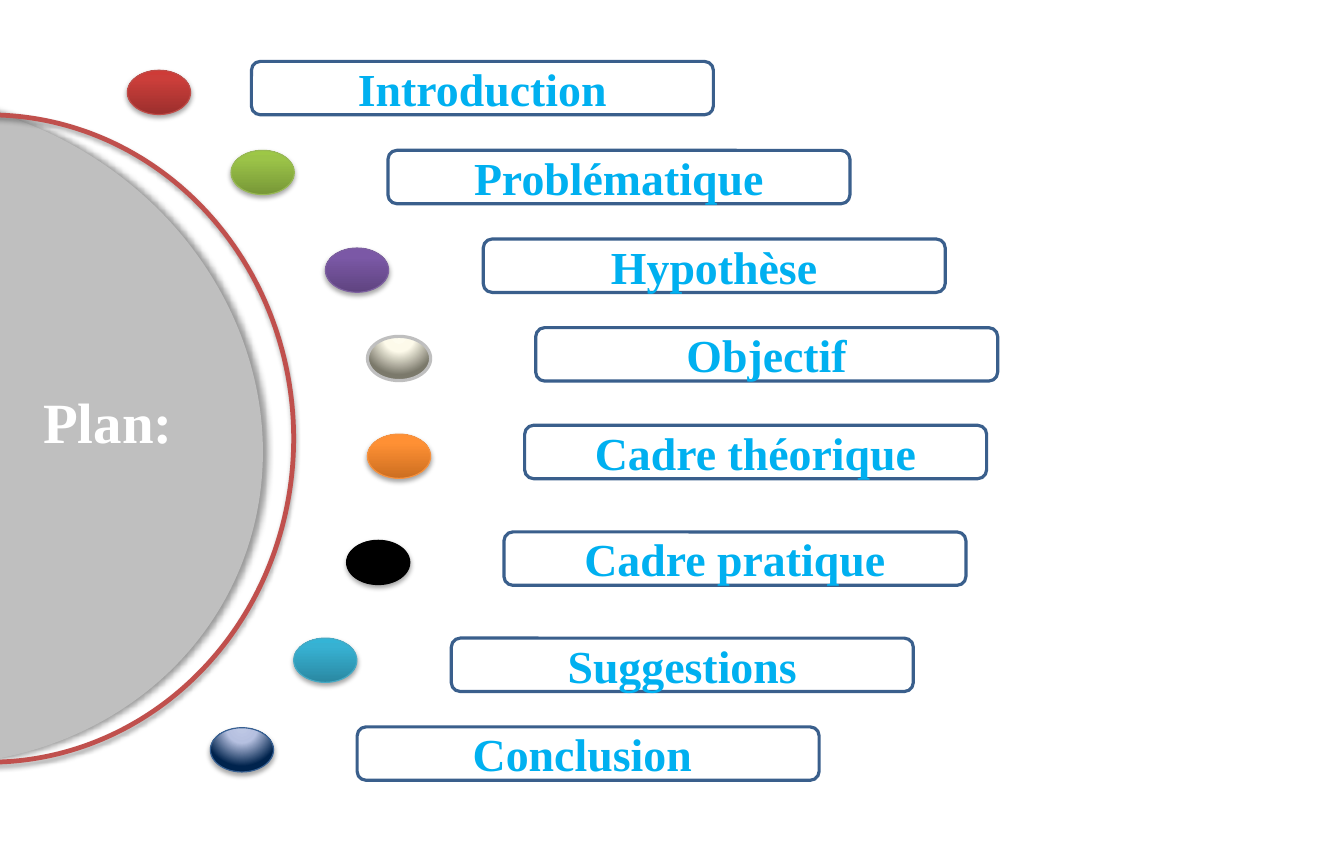
from dataclasses import dataclass
from typing import NamedTuple, Optional

from lxml.etree import SubElement
from pptx import Presentation
from pptx.dml.color import RGBColor
from pptx.enum.shapes import MSO_SHAPE as Preset
from pptx.enum.text import MSO_ANCHOR as Anchor, PP_ALIGN as Align
from pptx.oxml.ns import qn
from pptx.shapes.autoshape import Shape
from pptx.slide import Slide
from pptx.text.text import TextFrame
from pptx.util import Pt


@dataclass(frozen=True)
class Theme:
    font: str = "Times New Roman"
    title_size: float = 36
    label_size: float = 29
    title: str = "FFFFFF"
    label: str = "00B0F0"
    label_line: str = "3A5F8C"
    disc: str = "BFBFBF"
    ring: str = "C0504D"
    shadow: str = "000000"


class Box(NamedTuple):
    left: float
    top: float
    width: float
    height: float


class Shadow(NamedTuple):
    alpha: int
    blur: float
    distance: float
    angle: int


class Gradient(NamedTuple):
    stops: tuple[tuple[int, str], ...]
    spotlight: bool = False


def glossy(dark: str, middle: str, light: str) -> Gradient:
    """Linear shading, dark at the bottom and light at the top."""
    return Gradient(((0, dark), (80, middle), (100, light)))


def spotlit(light: str, middle: str, dark: str) -> Gradient:
    """Round shading, lit from above."""
    return Gradient(((0, light), (40, middle), (100, dark)), spotlight=True)


THEME = Theme()
DISC_SHADOW = Shadow(40, 4, 3, 0)
SOFT_SHADOW = Shadow(35, 3.1, 1.8, 90)
DOT_WIDTH, DOT_HEIGHT = 40, 28
LABEL_WIDTH, LABEL_HEIGHT = 292.3, 33.8


@dataclass(frozen=True)
class Step:
    name: str
    dot: tuple[float, float]
    label: tuple[float, float]
    shading: Optional[Gradient]
    outline: str
    outline_width: float = 0.75
    shadow: Optional[Shadow] = SOFT_SHADOW


STEPS = (
    Step("Introduction", (80.6, 44.5), (159.1, 38.9),
         glossy("9C2F2D", "CB3E3A", "CE3B37"), "BF4C48"),
    Step("Problématique", (146.2, 95.2), (245.5, 95.2),
         glossy("779737", "9BC348", "9DC746"), "98B955"),
    Step("Hypothèse", (205.9, 157), (305.8, 151.3),
         glossy("5F4480", "7B58A6", "7C57A8"), "7D60A0"),
    Step("Objectif", (232.5, 212.9), (339, 207.4),
         spotlit("FEFCEE", "FDFAEA", "7B796B"), "BFBFBF", 2, None),
    Step("Cadre théorique", (232.5, 274.8), (332, 269.2),
         glossy("CC6E20", "FF9034", "FF9136"), "F69240"),
    Step("Cadre pratique", (219.3, 342), (318.9, 336.7), None, "000000"),
    Step("Suggestions", (185.8, 403.9), (285.6, 403.9),
         glossy("2A88A2", "37B1D2", "34B4D6"), "46AAC5"),
    Step("Conclusion ", (133.1, 460.6), (226, 460.1),
         spotlit("BFC9E5", "B5C0E0", "00234D"), "376092"),
)


def add_preset(slide: Slide, preset: Preset, box: Box, fill: Optional[str] = None,
               line: Optional[str] = None, line_width: float = 0,
               shadow: Optional[Shadow] = None) -> Shape:
    shape = slide.shapes.add_shape(preset, *map(Pt, box))
    if fill:
        shape.fill.solid()
        shape.fill.fore_color.rgb = RGBColor.from_string(fill)
    else:
        shape.fill.background()
    if line:
        shape.line.color.rgb = RGBColor.from_string(line)
        shape.line.width = Pt(line_width)
    else:
        shape.line.fill.background()
    shape.shadow.inherit = False
    if shadow:
        cast_shadow(shape, shadow)
    return shape


def cast_shadow(shape: Shape, shadow: Shadow) -> None:
    effects = shape.element.spPr.find(qn("a:effectLst"))
    outer = SubElement(effects, qn("a:outerShdw"), blurRad=str(Pt(shadow.blur)),
                       dist=str(Pt(shadow.distance)), dir=str(shadow.angle * 60000),
                       rotWithShape="0")
    color = SubElement(outer, qn("a:srgbClr"), val=THEME.shadow)
    SubElement(color, qn("a:alpha"), val=str(shadow.alpha * 1000))


def shade(shape: Shape, gradient: Gradient) -> None:
    """Replace the solid fill of the shape by a gradient of any number of stops."""
    properties = shape.element.spPr
    solid = properties.find(qn("a:solidFill"))
    shading = SubElement(properties, qn("a:gradFill"), rotWithShape="1")
    properties.replace(solid, shading)
    stops = SubElement(shading, qn("a:gsLst"))
    for position, color in gradient.stops:
        stop = SubElement(stops, qn("a:gs"), pos=str(position * 1000))
        SubElement(stop, qn("a:srgbClr"), val=color)
    if gradient.spotlight:
        circle = SubElement(shading, qn("a:path"), path="circle")
        SubElement(circle, qn("a:fillToRect"),
                   l="50000", t="-80000", r="50000", b="180000")
    else:
        SubElement(shading, qn("a:lin"), ang=str(270 * 60000), scaled="0")


def write(frame: TextFrame, text: str, size: float, color: str, align: Align) -> None:
    frame.word_wrap = True
    frame.text = text
    paragraph = frame.paragraphs[0]
    paragraph.alignment = align
    font = paragraph.runs[0].font
    font.name, font.size, font.bold = THEME.font, Pt(size), True
    font.color.rgb = RGBColor.from_string(color)


def add_step(slide: Slide, step: Step) -> None:
    dot = add_preset(slide, Preset.OVAL, Box(*step.dot, DOT_WIDTH, DOT_HEIGHT),
                     step.outline, step.outline, step.outline_width, step.shadow)
    if step.shading:
        shade(dot, step.shading)
    label = add_preset(slide, Preset.FLOWCHART_ALTERNATE_PROCESS,
                       Box(*step.label, LABEL_WIDTH, LABEL_HEIGHT),
                       line=THEME.label_line, line_width=2)
    label.text_frame.vertical_anchor = Anchor.MIDDLE
    write(label.text_frame, step.name, THEME.label_size, THEME.label, Align.CENTER)


def add_plan_disc(slide: Slide) -> None:
    disc = add_preset(slide, Preset.CHORD, Box(-288.7, 63.4, 457.9, 417.6),
                      fill=THEME.disc, shadow=DISC_SHADOW)
    disc.rotation = 202.6
    disc.adjustments[0], disc.adjustments[1] = 25.91, 162.19
    ring = add_preset(slide, Preset.ARC, Box(-199.4, 72.7, 385.2, 409.7),
                      line=THEME.ring, line_width=3, shadow=SOFT_SHADOW)
    ring.adjustments[0], ring.adjustments[1] = 157.72, 60.57


def main() -> None:
    presentation = Presentation()
    presentation.slide_width, presentation.slide_height = Pt(850.4), Pt(538.6)
    slide = presentation.slides.add_slide(presentation.slide_layouts[6])
    add_plan_disc(slide)
    for step in STEPS:
        add_step(slide, step)
    title = slide.shapes.add_textbox(*map(Pt, Box(20.2, 241.2, 119.5, 51.1)))
    write(title.text_frame, "Plan:", THEME.title_size, THEME.title, Align.LEFT)
    presentation.save("out.pptx")


if __name__ == "__main__":
    main()
